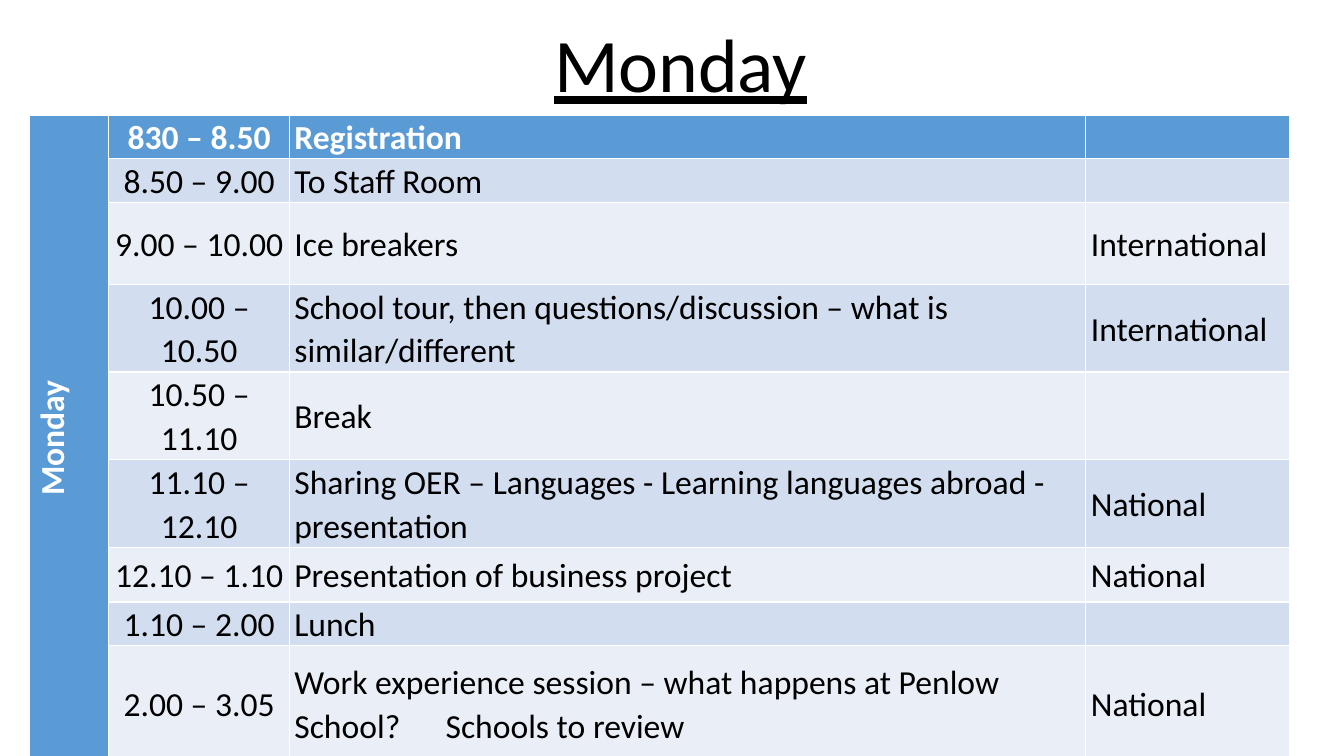
from dataclasses import dataclass

from lxml.etree import SubElement
from pptx import Presentation
from pptx.dml.color import RGBColor
from pptx.enum.text import MSO_ANCHOR, MSO_AUTO_SIZE, PP_ALIGN
from pptx.oxml.ns import qn
from pptx.util import Inches, Pt


@dataclass(frozen=True)
class Theme:
    """Colours and type sizes of the slide."""
    font: str = "Calibri"
    title_size: Pt = Pt(54)
    body_size: Pt = Pt(24)
    dark: RGBColor = RGBColor(0, 0, 0)
    light: RGBColor = RGBColor(255, 255, 255)
    accent: RGBColor = RGBColor(0x5B, 0x9B, 0xD5)
    bands: tuple = (RGBColor(0xEA, 0xEF, 0xF7), RGBColor(0xD2, 0xDE, 0xEF))


THEME = Theme()
DAY = "Monday"
COLUMN_WIDTHS = (0.79, 1.79, 7.9, 2.02)
SESSIONS = (
    (0.38, "830 – 8.50", "Registration", ""),
    (0.38, "8.50 – 9.00", "To Staff Room", ""),
    (0.81, "9.00 – 10.00", "Ice breakers", "International"),
    (0.81, "10.00 – 10.50",
     "School tour, then questions/discussion – what is similar/different", "International"),
    (0.75, "10.50 – 11.10", "Break", ""),
    (0.75, "11.10 – 12.10",
     "Sharing OER – Languages - Learning languages abroad - presentation", "National"),
    (0.54, "12.10 – 1.10", "Presentation of business project", "National"),
    (0.38, "1.10 – 2.00", "Lunch", ""),
    (0.75, "2.00 – 3.05",
     "Work experience session – what happens at Penlow School?\tSchools to review", "National"),
)


def apply_format(target, values):
    """Set each attribute in values on target."""
    for attribute, value in values.items():
        setattr(target, attribute, value)


def write_text(paragraph, text, size, color, alignment, spacing, **font_values):
    """Write one formatted run into a paragraph."""
    apply_format(paragraph, {"alignment": alignment, "line_spacing": spacing})
    run = paragraph.add_run()
    run.text = text
    apply_format(run.font, {"name": THEME.font, "size": size, **font_values})
    run.font.color.rgb = color


def add_tab_stop(paragraph, position):
    """Give a paragraph a left tab stop."""
    tabs = SubElement(paragraph._p.get_or_add_pPr(), qn("a:tabLst"))
    SubElement(tabs, qn("a:tab"), pos=str(position), algn="l")


def place_title(title, left, top, width, height):
    """Place and write the underlined day heading."""
    apply_format(title, {"left": left, "top": top, "width": width, "height": height})
    apply_format(title.text_frame, {
        "vertical_anchor": MSO_ANCHOR.BOTTOM,
        "auto_size": MSO_AUTO_SIZE.NONE,
        "word_wrap": True,
    })
    write_text(title.text_frame.paragraphs[0], DAY, THEME.title_size, THEME.dark,
               PP_ALIGN.CENTER, 0.9, underline=True)


def fill_cell(cell, text, background, heading, centred):
    """Fill and write one timetable cell."""
    apply_format(cell, {
        "vertical_anchor": MSO_ANCHOR.MIDDLE,
        "margin_left": Inches(0.05), "margin_right": Inches(0.05),
        "margin_top": 0, "margin_bottom": 0,
    })
    cell.fill.solid()
    cell.fill.fore_color.rgb = background
    if not text:
        return
    paragraph = cell.text_frame.paragraphs[0]
    write_text(paragraph, text, THEME.body_size, THEME.light if heading else THEME.dark,
               PP_ALIGN.CENTER if centred else PP_ALIGN.LEFT, 1.07, bold=heading)
    if "\t" in text:
        add_tab_stop(paragraph, Inches(1.5))


def add_timetable(slide, left, top, width, height):
    """Add the day's sessions beside a merged vertical day label."""
    timetable = slide.shapes.add_table(
        len(SESSIONS), len(COLUMN_WIDTHS), left, top, width, height).table
    for column, column_width in zip(timetable.columns, COLUMN_WIDTHS):
        column.width = Inches(column_width)
    for row_index, (row_height, *entries) in enumerate(SESSIONS):
        timetable.rows[row_index].height = Inches(row_height)
        heading = row_index == 0
        background = THEME.accent if heading else THEME.bands[row_index % 2]
        for column_index, entry in enumerate(entries, start=1):
            fill_cell(timetable.cell(row_index, column_index), entry, background,
                      heading, centred=column_index == 1)
    day_label = timetable.cell(0, 0)
    day_label.merge(timetable.cell(len(SESSIONS) - 1, 0))
    fill_cell(day_label, DAY, THEME.accent, heading=True, centred=True)
    day_label._tc.get_or_add_tcPr().set("vert", "vert270")


def main():
    """Build and save the timetable slide."""
    presentation = Presentation()
    apply_format(presentation, {"slide_width": Inches(13.33), "slide_height": Inches(7.5)})
    slide = presentation.slides.add_slide(presentation.slide_layouts[0])
    subtitle = slide.placeholders[1].element
    subtitle.getparent().remove(subtitle)
    place_title(slide.shapes.title, Inches(1.75), Inches(0.17), Inches(10), Inches(0.96))
    add_timetable(slide, Inches(0.29), Inches(1.14), Inches(12.5), Inches(6.06))
    presentation.save("out.pptx")


if __name__ == "__main__":
    main()
